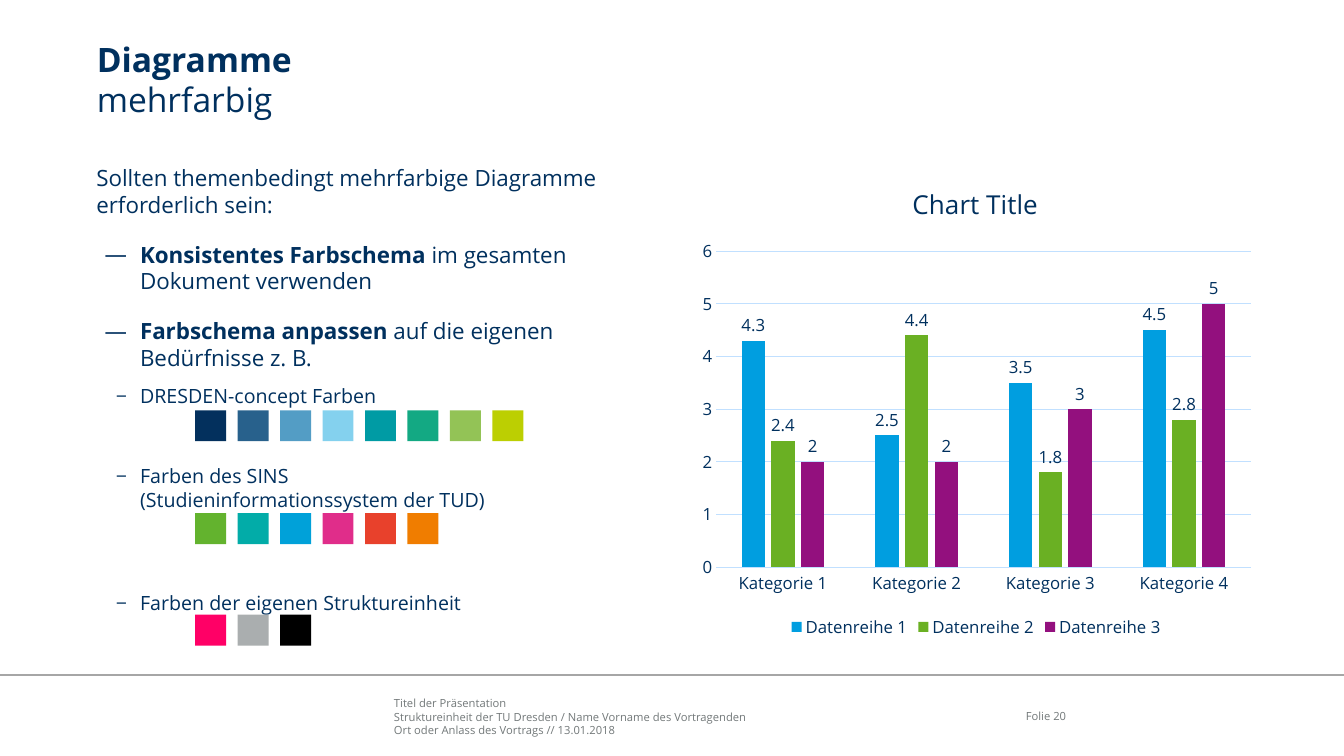
from dataclasses import dataclass

from lxml import etree
from pptx import Presentation
from pptx.chart.data import CategoryChartData
from pptx.dml.color import RGBColor
from pptx.enum.chart import (
    XL_CHART_TYPE as ChartType,
    XL_LABEL_POSITION as LabelPosition,
    XL_LEGEND_POSITION as LegendPosition,
    XL_TICK_MARK as TickMark,
)
from pptx.enum.shapes import MSO_CONNECTOR as Connector, MSO_SHAPE as Shape
from pptx.enum.text import MSO_ANCHOR as Anchor, PP_ALIGN as Align
from pptx.oxml.ns import qn
from pptx.util import Cm, Pt


@dataclass(frozen=True)
class Theme:
    font: str = "Open Sans"
    navy: str = "00305E"
    footer_grey: str = "727879"
    rule_grey: str = "A6A6A6"
    grid: str = "C1E0FF"
    series: tuple = ("009EE0", "6AB023", "93107E")
    title_size: float = 24
    body_size: float = 16
    sub_size: float = 14
    chart_title_size: float = 18.6
    chart_size: float = 12
    footer_size: float = 8


@dataclass
class Entry:
    """One body paragraph; runs are (text, bold) pairs."""
    runs: list
    size: float
    bullet: str = ""
    hang: float = 0
    before: float = 0
    after: float = 0


class SlideBuilder:
    def __init__(self, slide, theme):
        self.slide = slide
        self.theme = theme

    def style(self, font, size, color):
        font.name = self.theme.font
        font.size = Pt(size)
        font.color.rgb = RGBColor.from_string(color)

    def text(self, box, entries, color, anchor=Anchor.TOP, align=Align.LEFT):
        frame = self.slide.shapes.add_textbox(*map(Cm, box)).text_frame
        frame.word_wrap = True
        frame.vertical_anchor = anchor
        frame.margin_left = frame.margin_right = frame.margin_top = frame.margin_bottom = 0
        for index, entry in enumerate(entries):
            paragraph = frame.add_paragraph() if index else frame.paragraphs[0]
            paragraph.alignment = align
            paragraph.line_spacing = 1.0
            paragraph.space_before = Pt(entry.before)
            paragraph.space_after = Pt(entry.after)
            if entry.bullet:
                self.bullet(paragraph, entry)
            self.style(paragraph.font, entry.size, color)
            for content, bold in entry.runs:
                for part, line in enumerate(content.split("\n")):
                    if part:
                        paragraph.add_line_break()
                    if line:
                        run = paragraph.add_run()
                        run.text = line
                        run.font.bold = bold

    def bullet(self, paragraph, entry):
        properties = paragraph._p.get_or_add_pPr()
        properties.set("marL", str(Cm(1.1)))
        properties.set("indent", str(-Cm(entry.hang)))
        etree.SubElement(properties, qn("a:buFont")).set("typeface", self.theme.font)
        etree.SubElement(properties, qn("a:buChar")).set("char", entry.bullet)

    def rule(self, y, width):
        rule = self.slide.shapes.add_connector(Connector.STRAIGHT, 0, Cm(y), Cm(width), Cm(y))
        rule.line.color.rgb = RGBColor.from_string(self.theme.rule_grey)
        rule.line.width = Pt(1)
        etree.SubElement(rule._element.spPr, qn("a:effectLst"))

    def swatches(self, top, colors, left=4.92, side=0.78, step=1.07):
        row = self.slide.shapes.add_group_shape()
        for index, color in enumerate(colors):
            swatch = row.shapes.add_shape(
                Shape.RECTANGLE, Cm(left + index * step), Cm(top), Cm(side), Cm(side))
            swatch.shadow.inherit = False
            swatch.fill.solid()
            swatch.fill.fore_color.rgb = RGBColor.from_string(color)
            swatch.line.fill.background()

    @staticmethod
    def layout(**settings):
        layout = etree.Element(qn("c:layout"))
        manual = etree.SubElement(layout, qn("c:manualLayout"))
        for name, value in settings.items():
            etree.SubElement(manual, qn(f"c:{name}")).set("val", str(value))
        return layout

    def column_chart(self, box, title, categories, series):
        theme = self.theme
        data = CategoryChartData()
        data.categories = categories
        for name, values in series.items():
            data.add_series(name, values)
        chart = self.slide.shapes.add_chart(
            ChartType.COLUMN_CLUSTERED, *map(Cm, box), data).chart
        self.style(chart.font, theme.chart_size, theme.navy)

        # Title and legend
        chart.has_title = True
        heading = chart.chart_title.text_frame.paragraphs[0]
        heading.text = title
        self.style(heading.font, theme.chart_title_size, theme.navy)
        heading.font.bold = False
        chart.has_legend = True
        chart.legend.position = LegendPosition.BOTTOM
        chart.legend.include_in_layout = False
        self.style(chart.legend.font, theme.chart_size, theme.navy)

        # Placement of title and plot inside the chart
        title_xml = chart.chart_title._element
        plot_xml = chart._chartSpace.chart.plotArea
        for parent in (title_xml, plot_xml):
            for old in parent.findall(qn("c:layout")):
                parent.remove(old)
        title_xml.find(qn("c:tx")).addnext(
            self.layout(xMode="edge", yMode="edge", x=0.38, y=0.03))
        plot_xml.insert(0, self.layout(
            layoutTarget="inner", xMode="edge", yMode="edge", x=0.045, y=0.183, w=0.936, h=0.66))

        # Axes
        for axis in (chart.category_axis, chart.value_axis):
            axis.major_tick_mark = axis.minor_tick_mark = TickMark.NONE
            self.style(axis.tick_labels.font, theme.chart_size, theme.navy)
        values_axis = chart.value_axis
        values_axis.minimum_scale, values_axis.maximum_scale = 0, 6
        values_axis.major_unit = 1
        values_axis.format.line.fill.background()
        values_axis.has_major_gridlines = True
        for line in (chart.category_axis.format.line, values_axis.major_gridlines.format.line):
            line.color.rgb = RGBColor.from_string(theme.grid)
            line.width = Pt(0.75)

        # Columns and value labels
        plot = chart.plots[0]
        plot.vary_by_categories = False
        plot.gap_width, plot.overlap = 219, -27
        for columns, color in zip(plot.series, theme.series):
            columns.format.fill.solid()
            columns.format.fill.fore_color.rgb = RGBColor.from_string(color)
            labels = columns.data_labels
            labels.show_value = True
            labels.position = LabelPosition.OUTSIDE_END
            self.style(labels.font, theme.chart_size, theme.navy)


def main():
    theme = Theme()
    deck = Presentation()
    deck.slide_width, deck.slide_height = Cm(33.87), Cm(19.05)
    page = SlideBuilder(deck.slides.add_slide(deck.slide_layouts[6]), theme)

    # Footer
    footer = ["Titel der Präsentation",
              "Struktureinheit der TU Dresden / Name Vorname des Vortragenden",
              "Ort oder Anlass des Vortrags // 13.01.2018"]
    page.text((9.93, 17.55, 14.4, 1.02),
              [Entry([(line, False)], theme.footer_size) for line in footer],
              theme.footer_grey, anchor=Anchor.BOTTOM)
    page.rule(17.01, 33.87)
    page.text((24.71, 17.53, 2.16, 1.02), [Entry([("Folie 20", False)], theme.footer_size)],
              theme.footer_grey, anchor=Anchor.MIDDLE, align=Align.RIGHT)

    # Title
    page.text((2.44, 0.97, 29.39, 2.1),
              [Entry([("Diagramme\n", True), ("mehrfarbig", False)], theme.title_size)],
              theme.navy)

    # Chart
    page.column_chart(
        (17.4, 4.12, 14.4, 12.07), "Chart Title",
        [f"Kategorie {number}" for number in range(1, 5)],
        {"Datenreihe 1": (4.3, 2.5, 3.5, 4.5),
         "Datenreihe 2": (2.4, 4.4, 1.8, 2.8),
         "Datenreihe 3": (2, 2, 3, 5)})

    # Recommendations
    main_point = dict(size=theme.body_size, bullet="—", hang=0.89, before=16.5)
    sub_point = dict(size=theme.sub_size, bullet="−", hang=0.61)
    page.text((2.43, 4.13, 14.42, 12.07), [
        Entry([("Sollten themenbedingt mehrfarbige Diagramme erforderlich sein:", False)],
              theme.body_size),
        Entry([("Konsistentes Farbschema ", True),
               ("im gesamten Dokument verwenden", False)], **main_point),
        Entry([("Farbschema anpassen ", True),
               ("auf die eigenen Bedürfnisse z. B.", False)], after=6, **main_point),
        Entry([("DRESDEN-concept Farben", False)], before=3, **sub_point),
        Entry([("Farben des SINS\n(Studieninformationssystem der TUD)", False)],
              before=40.5, **sub_point),
        Entry([("Farben der eigenen Struktureinheit", False)], before=57, **sub_point),
    ], theme.navy)

    # Colour swatches
    page.swatches(10.34, ["03305D", "28618C", "539DC5", "84D1EE",
                          "009BA4", "13A983", "93C356", "BCCF02"])
    page.swatches(12.93, ["63B32E", "02ACA8", "00A1D9", "E02D8A", "E8412C", "F07D00"])
    page.swatches(15.49, ["FF0066", "AAAEAF", "000000"])

    deck.save("out.pptx")


if __name__ == "__main__":
    main()
